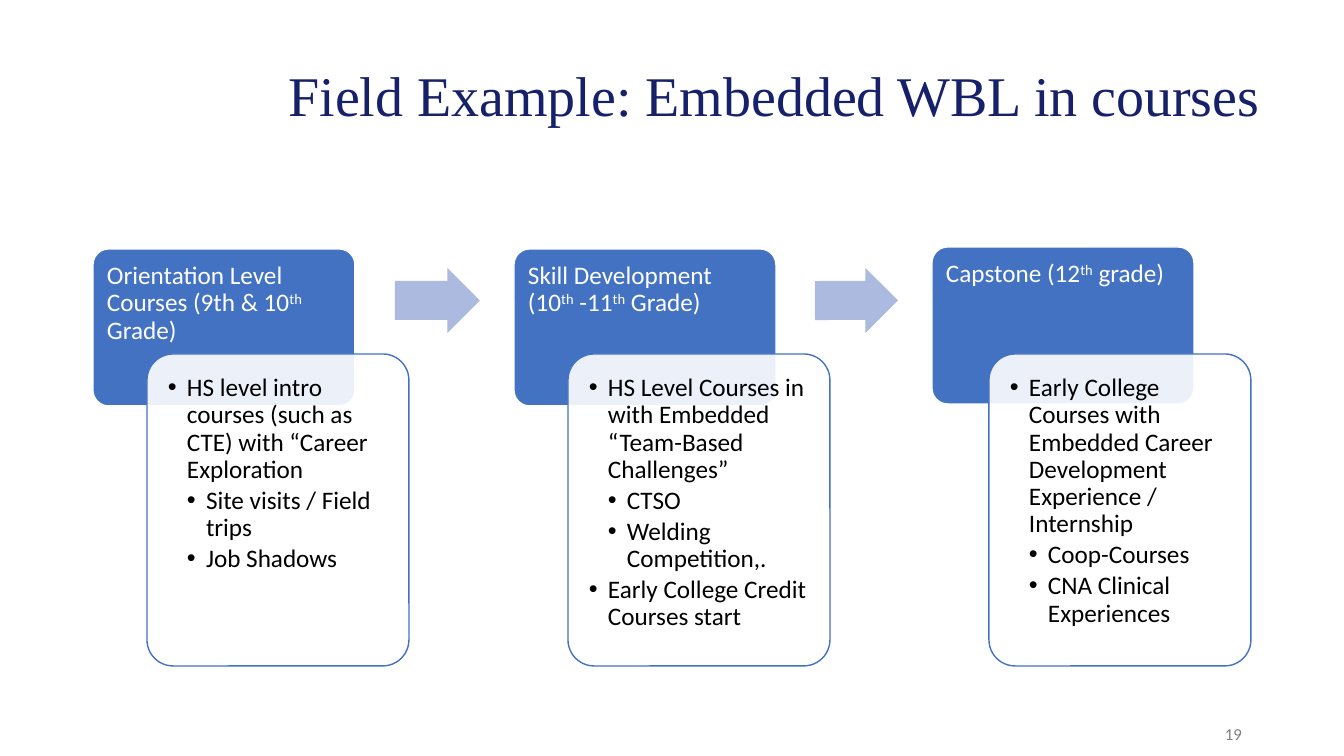
from dataclasses import dataclass

from lxml.etree import SubElement
from pptx import Presentation
from pptx.dml.color import RGBColor
from pptx.enum.shapes import MSO_SHAPE as Shape
from pptx.enum.text import MSO_ANCHOR as Anchor, PP_ALIGN as Align
from pptx.oxml.ns import qn
from pptx.util import Pt

EMU_PER_PX = 914400 / 100.8


def px(length):
    return round(length * EMU_PER_PX)


@dataclass(frozen=True)
class Theme:
    navy: str = "172169"
    blue: str = "4372C3"
    pale_blue: str = "ABBADE"
    white: str = "FFFFFF"
    black: str = "000000"
    gray: str = "7F7F7F"
    title_font: str = "Times New Roman"
    body_font: str = "Calibri"
    title_size: int = 40
    body_size: int = 18
    number_size: int = 12
    line_spacing: float = 0.9
    bullet_gap: float = 2.7


class SlideBuilder:
    def __init__(self, slide, theme):
        self.slide = slide
        self.theme = theme

    def shape(self, kind, box, fill, adjustments, line=None, opacity=100):
        shape = self.slide.shapes.add_shape(kind, *map(px, box))
        shape.shadow.inherit = False
        for index, value in enumerate(adjustments):
            shape.adjustments[index] = value
        shape.fill.solid()
        shape.fill.fore_color.rgb = RGBColor.from_string(fill)
        if opacity < 100:
            color = shape.fill._xPr.find(".//" + qn("a:srgbClr"))
            SubElement(color, qn("a:alpha"), val=str(opacity * 1000))
        if line:
            shape.line.color.rgb = RGBColor.from_string(line)
            shape.line.width = Pt(1)
        else:
            shape.line.fill.background()
        return shape

    def text_frame(self, box, insets, anchor=Anchor.TOP):
        """Add a wrapping text box; insets run left, top, right, bottom."""
        frame = self.slide.shapes.add_textbox(*map(px, box)).text_frame
        frame.word_wrap = True
        frame.vertical_anchor = anchor
        (frame.margin_left, frame.margin_top,
         frame.margin_right, frame.margin_bottom) = map(px, insets)
        return frame

    def style(self, paragraph, color, size, font):
        paragraph.font.name = font
        paragraph.font.size = Pt(size)
        paragraph.font.color.rgb = RGBColor.from_string(color)

    def label(self, box, text, color, size, font, align):
        paragraph = self.text_frame(box, (10, 5, 10, 5), Anchor.MIDDLE).paragraphs[0]
        paragraph.text = text
        paragraph.alignment = align
        paragraph.line_spacing = self.theme.line_spacing
        self.style(paragraph, color, size, font)

    def heading(self, left, top, text):
        """Add a stage heading; text between carets is superscript."""
        theme = self.theme
        self.shape(Shape.ROUNDED_RECTANGLE, (left, top, 262, 157),
                   theme.blue, [0.1], theme.white)
        frame = self.text_frame((left, top, 262, 105), (14, 14, 14, 7))
        paragraph = frame.paragraphs[0]
        paragraph.line_spacing = theme.line_spacing
        self.style(paragraph, theme.white, theme.body_size, theme.body_font)
        for index, part in enumerate(text.split("^")):
            run = paragraph.add_run()
            run.text = part
            if index % 2:
                run._r.get_or_add_rPr().set("baseline", "30000")

    def details(self, left, top, items):
        theme = self.theme
        self.shape(Shape.ROUNDED_RECTANGLE, (left, top, 262, 312),
                   theme.white, [0.1], theme.blue, opacity=90)
        frame = self.text_frame((left + 7, top + 7, 247, 297), (14,) * 4)
        for index, (level, text) in enumerate(items):
            paragraph = frame.add_paragraph() if index else frame.paragraphs[0]
            paragraph.text = text
            paragraph.level = level
            self.bullet(paragraph, level)
            paragraph.line_spacing = theme.line_spacing
            if index:
                paragraph.space_before = Pt(theme.bullet_gap)
            self.style(paragraph, theme.black, theme.body_size, theme.body_font)

    def bullet(self, paragraph, level):
        properties = paragraph._p.get_or_add_pPr()
        properties.set("marL", str(px(19 * level)))
        properties.set("indent", str(px(-19)))
        color = SubElement(properties, qn("a:buClr"))
        SubElement(color, qn("a:srgbClr"), val=self.theme.black)
        SubElement(properties, qn("a:buFont"), typeface="Arial")
        SubElement(properties, qn("a:buChar"), char="•")

    def arrow(self, left, width, rotation):
        arrow = self.shape(Shape.RIGHT_ARROW, (left, 268, width, 65),
                           self.theme.pale_blue, [0.6, 0.5])
        arrow.rotation = rotation


STAGES = [
    (93, 249, "Orientation Level Courses (9th & 10^th^ Grade)", [
        (1, "HS level intro courses (such as CTE) with “Career Exploration"),
        (2, "Site visits / Field trips"),
        (2, "Job Shadows"),
    ]),
    (514, 249, "Skill Development (10^th^ -11^th^ Grade)", [
        (1, "HS Level Courses in with Embedded “Team-Based Challenges”"),
        (2, "CTSO"),
        (2, "Welding Competition,."),
        (1, "Early College Credit Courses start"),
    ]),
    (932, 247, "Capstone (12^th^ grade)", [
        (1, "Early College Courses with Embedded Career Development "
            "Experience / Internship"),
        (2, "Coop-Courses"),
        (2, "CNA Clinical Experiences"),
    ]),
]
ARROWS = [(395, 85, 0), (815, 83, 359.9)]
STAGE_PITCH = 421


def main():
    presentation = Presentation()
    presentation.slide_width = px(1344)
    presentation.slide_height = px(756)
    theme = Theme()
    slide = presentation.slides.add_slide(presentation.slide_layouts[6])
    builder = SlideBuilder(slide, theme)

    builder.label((252, 68, 1044, 61), "Field Example: Embedded WBL in courses",
                  theme.navy, theme.title_size, theme.title_font, Align.CENTER)
    for index, (left, top, heading, items) in enumerate(STAGES):
        builder.heading(left, top, heading)
        builder.details(147 + index * STAGE_PITCH, 354, items)
        if index < len(ARROWS):
            builder.arrow(*ARROWS[index])
    builder.label((950, 715, 302, 40), "19", theme.gray,
                  theme.number_size, theme.body_font, Align.RIGHT)
    presentation.save("out.pptx")


if __name__ == "__main__":
    main()
